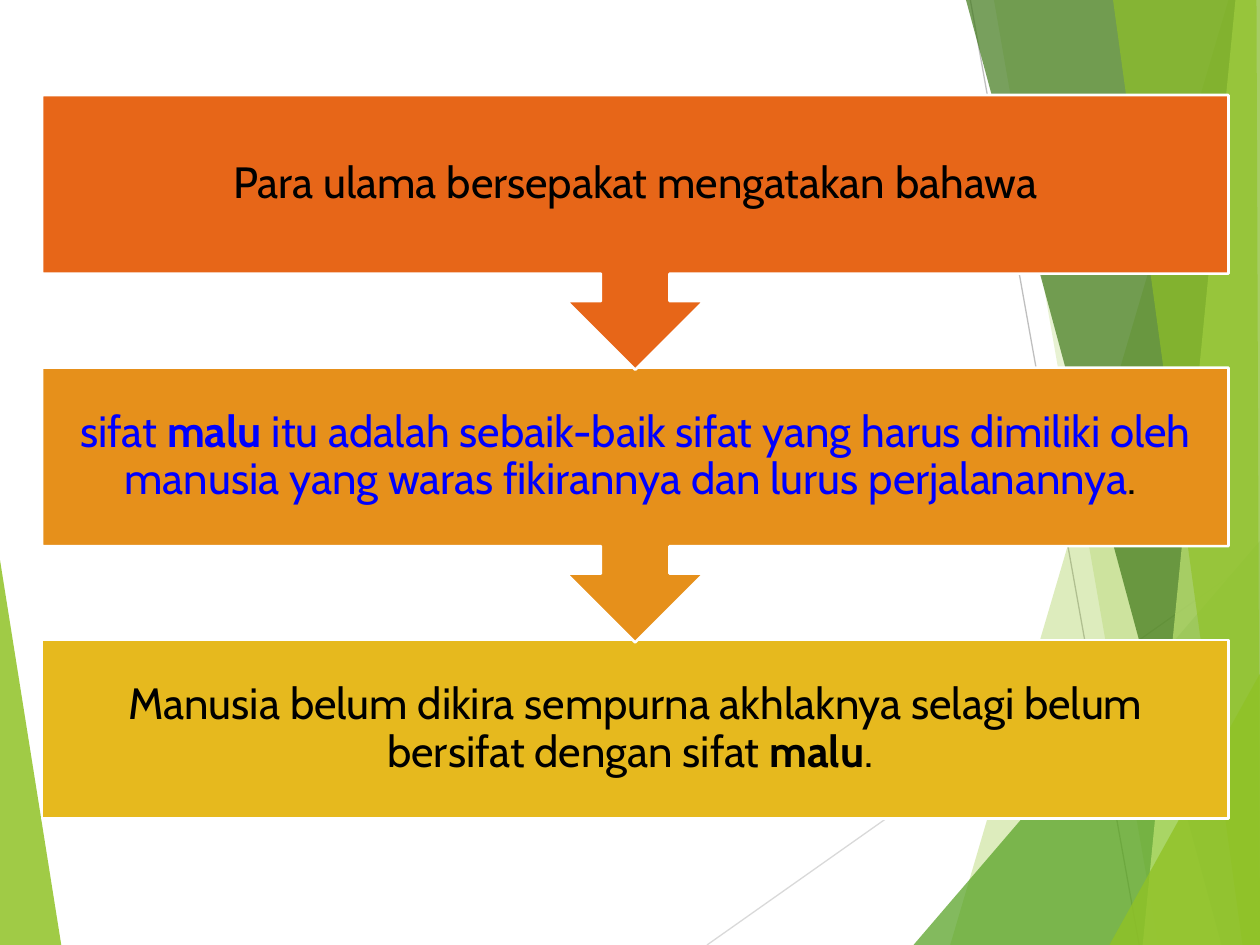
"""Build a slide with three stacked callouts over a green faceted backdrop."""
from lxml import etree
from pptx import Presentation
from pptx.dml.color import RGBColor
from pptx.enum.shapes import MSO_CONNECTOR as CONN, MSO_SHAPE as SHAPE
from pptx.enum.text import MSO_ANCHOR as ANCHOR, PP_ALIGN as ALIGN
from pptx.oxml.ns import qn
from pptx.util import Pt

THEME = {
    "font": "Cabin", "size": Pt(25), "black": "000000", "blue": "0000FF", "white": "FFFFFF",
    "orange": "E76618", "amber": "E6901B", "yellow": "E6B91E",
    "lime": "90C226", "leaf": "54A021", "forest": "3F7819", "pale": "C0E474",
    "ray": "D9D9D9", "slant": "BFBFBF",
}
W, H = 720, 540


def rgb(name):
    return RGBColor.from_string(THEME[name])


def add_facet(shapes, color, opacity, points):
    fb = shapes.build_freeform(*points[0], scale=Pt(1))
    fb.add_line_segments(points[1:], close=True)
    sp = fb.convert_to_shape()
    sp.shadow.inherit = False
    sp.fill.solid()
    sp.fill.fore_color.rgb = rgb(color)
    sp.line.fill.background()
    clr = sp.fill._xPr.find(qn("a:solidFill"))[0]
    etree.SubElement(clr, qn("a:alpha"), val=str(opacity * 1000))


prs = Presentation()
prs.slide_width, prs.slide_height = Pt(W), Pt(H)
s = prs.slides.add_slide(prs.slide_layouts[6])

add_facet(s.shapes, "lime", 85, [(0, 320), (35.3, H), (0, H)])

rays = [("ray", (404, H, W, 317)), ("slant", (554.5, 0, 651, H))]
for color, ends in rays:
    cx = s.shapes.add_connector(CONN.STRAIGHT, *map(Pt, ends))
    cx.line.color.rgb = rgb(color)
    cx.line.width = Pt(0.75)
    etree.SubElement(cx._element.spPr, qn("a:effectLst"))

facets = [
    ("lime", 30, [(702, 0), (543, H), (W, H), (W, 0)]),
    ("lime", 20, [(567.5, 0), (661.5, H), (W, H), (W, 0)]),
    ("leaf", 72, [(522.5, H), (W, 309), (W, H)]),
    ("forest", 70, [(552.5, 0), (698.5, H), (W, H), (W, 0)]),
    ("pale", 70, [(706.5, 0), (653, H), (W, H), (W, 0)]),
    ("lime", 65, [(636, 0), (710, H), (W, H), (718.5, 0)]),
    ("lime", 80, [(634.5, H), (W, 385), (W, H)]),
]
for color, opacity, points in facets:
    add_facet(s.shapes, color, opacity, points)

LEFT, TOP, WIDTH, PITCH = 24, 54.3, 678, 155.75
steps = [
    (SHAPE.DOWN_ARROW_CALLOUT, 157, "orange",
     [("Para ulama bersepakat mengatakan bahawa", "black", False)]),
    (SHAPE.DOWN_ARROW_CALLOUT, 157, "amber",
     [("sifat ", "blue", False), ("malu ", "blue", True),
      ("itu adalah sebaik-baik sifat yang harus dimiliki oleh manusia yang waras "
       "fikirannya dan lurus perjalanannya", "blue", False), (". ", "black", False)]),
    (SHAPE.RECTANGLE, 102, "yellow",
     [("Manusia belum dikira sempurna akhlaknya selagi belum bersifat dengan sifat ",
       "black", False), ("malu", "black", True), (". ", "black", False)]),
]
frame_format = {
    "word_wrap": True, "vertical_anchor": ANCHOR.MIDDLE,
    "margin_left": Pt(14), "margin_right": Pt(14),
    "margin_top": Pt(14), "margin_bottom": Pt(14),
}
for i, (kind, height, fill, runs) in reversed(list(enumerate(steps))):
    sp = s.shapes.add_shape(kind, Pt(LEFT), Pt(TOP + i * PITCH), Pt(WIDTH), Pt(height))
    sp.shadow.inherit = False
    sp.fill.solid()
    sp.fill.fore_color.rgb = rgb(fill)
    sp.line.color.rgb = rgb("white")
    sp.line.width = Pt(1.5)
    tf = sp.text_frame
    for name, value in frame_format.items():
        setattr(tf, name, value)
    p = tf.paragraphs[0]
    p.alignment = ALIGN.CENTER
    p.line_spacing = 0.9
    for text, color, bold in runs:
        r = p.add_run()
        r.text = text
        r.font.color.rgb = rgb(color)
        for name, value in {"name": THEME["font"], "size": THEME["size"], "bold": bold}.items():
            setattr(r.font, name, value)

prs.save("out.pptx")
